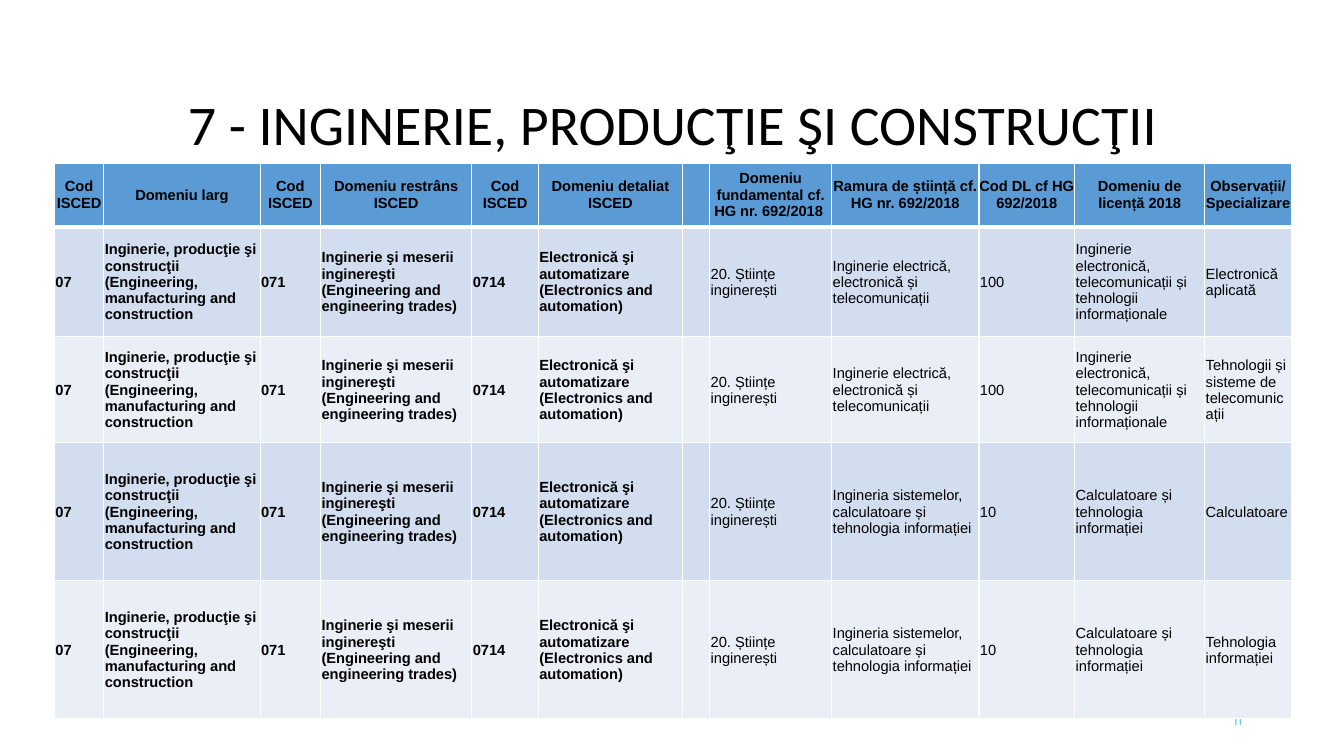
from dataclasses import dataclass

from lxml import etree
from pptx import Presentation
from pptx import util as u
from pptx.dml.color import RGBColor
from pptx.enum import text as t
from pptx.oxml import ns

PX = 9144
TITLE_ONLY = 5


@dataclass(frozen=True)
class Theme:
    ink: str = "000000"
    accent: str = "5FCBEF"
    header: str = "5B9BD5"
    bands: tuple = ("D2DEEF", "EAEFF7")
    border: str = "FFFFFF"
    title_size: float = 40
    table_size: float = 10.5
    number_size: float = 9
    title_font: str = "Calibri"
    table_font: str = "Arial"
    number_font: str = "Cabin"


def px(*lengths):
    return [u.Emu(length * PX) for length in lengths]


def write(frame, content, *, font, size, color, bold=False,
          align=t.PP_ALIGN.LEFT, line_spacing=None):
    frame.word_wrap = True
    paragraph = frame.paragraphs[0]
    paragraph.alignment = align
    paragraph.line_spacing = line_spacing
    run = paragraph.add_run()
    run.text = content
    run.font.name = font
    run.font.size = u.Pt(size)
    run.font.bold = bold
    run.font.color.rgb = RGBColor.from_string(color)


class SlideBuilder:
    def __init__(self, deck, theme):
        self.theme = theme
        self.slide = deck.slides.add_slide(deck.slide_layouts[TITLE_ONLY])

    def title(self, content, left, top, width, height):
        heading = self.slide.shapes.title
        heading.left, heading.top, heading.width, heading.height = px(left, top, width, height)
        frame = heading.text_frame
        frame.auto_size = t.MSO_AUTO_SIZE.NONE
        frame.vertical_anchor = t.MSO_ANCHOR.MIDDLE
        write(frame, content, font=self.theme.title_font, size=self.theme.title_size,
              color=self.theme.ink, align=t.PP_ALIGN.CENTER, line_spacing=0.9)

    def page_number(self, content, left, top, width, height):
        box = self.slide.shapes.add_textbox(*px(left, top, width, height))
        box.text_frame.vertical_anchor = t.MSO_ANCHOR.MIDDLE
        write(box.text_frame, content, font=self.theme.number_font,
              size=self.theme.number_size, color=self.theme.accent, align=t.PP_ALIGN.RIGHT)

    def borders(self, cell, **widths):
        properties = cell._tc.get_or_add_tcPr()
        for side in "LRTB":
            line = etree.SubElement(properties, ns.qn(f"a:ln{side}"),
                                    w=str(u.Pt(widths.get(side, 1))))
            fill = etree.SubElement(line, ns.qn("a:solidFill"))
            etree.SubElement(fill, ns.qn("a:srgbClr"), val=self.theme.border)

    def cell(self, cell, content, fill, inset, bold, align, **border_widths):
        self.borders(cell, **border_widths)
        cell.fill.solid()
        cell.fill.fore_color.rgb = RGBColor.from_string(fill)
        cell.vertical_anchor = t.MSO_ANCHOR.MIDDLE
        cell.margin_left, cell.margin_top, cell.margin_right, cell.margin_bottom = px(
            inset, inset, inset, 0)
        if content:
            write(cell.text_frame, content, font=self.theme.table_font,
                  size=self.theme.table_size, color=self.theme.ink, bold=bold, align=align)

    def table(self, header, records, left, top, column_widths, row_heights, bold_columns):
        grid = self.slide.shapes.add_table(
            len(row_heights), len(column_widths),
            *px(left, top, sum(column_widths), sum(row_heights))).table
        grid.horz_banding = False
        for column, width in zip(grid.columns, px(*column_widths)):
            column.width = width
        for row, height in zip(grid.rows, px(*row_heights)):
            row.height = height
        for c, label in enumerate(header):
            self.cell(grid.cell(0, c), label, self.theme.header, 0, True,
                      t.PP_ALIGN.CENTER, B=3)
        for r, record in enumerate(records, 1):
            band = self.theme.bands[(r - 1) % 2]
            for c, value in enumerate(record):
                self.cell(grid.cell(r, c), value, band, 1, c < bold_columns,
                          t.PP_ALIGN.LEFT, T=3 if r == 1 else 1)


HEADER = [
    "Cod ISCED", "Domeniu larg", "Cod ISCED", "Domeniu restrâns ISCED", "Cod ISCED",
    "Domeniu detaliat ISCED", "", "Domeniu fundamental cf. HG nr. 692/2018 ",
    "Ramura de știință cf. HG nr. 692/2018", "Cod DL cf HG 692/2018",
    "Domeniu de licență 2018", "Observații/ Specializare",
]
ISCED = [
    "07", "Inginerie, producţie şi construcţii (Engineering, manufacturing and construction",
    "071", "Inginerie şi meserii inginereşti (Engineering and engineering trades)",
    "0714", "Electronică şi automatizare (Electronics and automation)",
]
FUNDAMENTAL = "20. Științe inginerești"
ELECTRONICS = [
    "Inginerie electrică, electronică și telecomunicații", "100",
    "Inginerie electronică, telecomunicații și tehnologii informaționale",
]
COMPUTING = [
    "Ingineria sistemelor, calculatoare și tehnologia informației", "10",
    "Calculatoare și tehnologia informației",
]
SPECIALISATIONS = [
    (ELECTRONICS, "Electronică aplicată"),
    (ELECTRONICS, "Tehnologii și sisteme de telecomunicații"),
    (COMPUTING, "Calculatoare"),
    (COMPUTING, "Tehnologia informației"),
]


def main():
    deck = Presentation()
    deck.slide_width, deck.slide_height = px(1333, 750)
    page = SlideBuilder(deck, Theme())
    page.title("7 - INGINERIE, PRODUCŢIE ŞI CONSTRUCŢII", 92, 90, 1150, 72)
    page.page_number("11", 942, 695, 300, 40)
    records = [[*ISCED, "", FUNDAMENTAL, *branch, specialisation]
               for branch, specialisation in SPECIALISATIONS]
    page.table(HEADER, records, 54, 162,
               column_widths=[49, 155, 60, 150, 66, 143, 27, 121, 146, 95, 129, 86],
               row_heights=[63, 109, 105, 137, 137],
               bold_columns=len(ISCED))
    deck.save("out.pptx")


if __name__ == "__main__":
    main()
